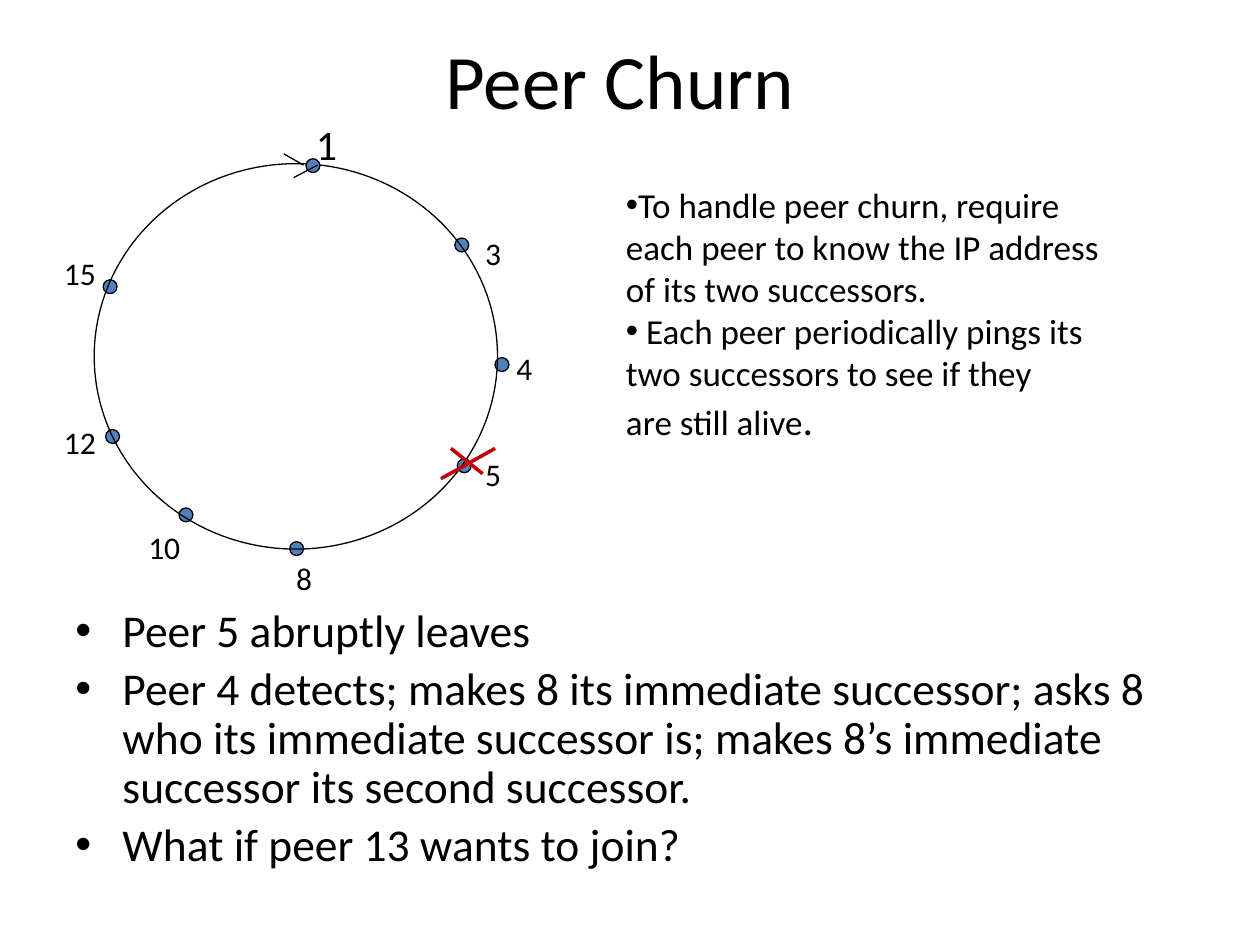
import pptx
import pptx.dml.color
import pptx.enum.shapes
import pptx.enum.text
import pptx.oxml
import pptx.oxml.ns
import pptx.util

Cm, Pt = pptx.util.Cm, pptx.util.Pt
ALIGN = pptx.enum.text.PP_ALIGN
ANCHOR = pptx.enum.text.MSO_ANCHOR
COLORS = {"text": "000000", "peer": "4F81BD", "cross": "C00000"}


def rgb(name):
    return pptx.dml.color.RGBColor.from_string(COLORS[name])


class SlideBuilder:
    font = "Calibri"
    dot_size = 0.28

    def __init__(self, slide):
        self.s = slide

    def format_run(self, r, size):
        r.font.name = self.font
        r.font.size = Pt(size)
        r.font.color.rgb = rgb("text")

    def text(self, x, y, w, h, lines, size, wrap=True, anchor=ANCHOR.TOP):
        sp = self.s.shapes.add_textbox(Cm(x), Cm(y), Cm(w), Cm(h))
        tf = sp.text_frame
        tf.word_wrap = wrap
        tf.vertical_anchor = anchor
        if not wrap:
            tf.auto_size = pptx.enum.text.MSO_AUTO_SIZE.SHAPE_TO_FIT_TEXT
        for i, line in enumerate(lines):
            p = tf.add_paragraph() if i else tf.paragraphs[0]
            p.text = line
            for r in p.runs:
                self.format_run(r, size)
        return tf

    def bullet(self, p, indent=0):
        pPr = p._p.get_or_add_pPr()
        pPr.set("marL", str(Cm(indent)))
        pPr.set("indent", str(-Cm(indent)))
        ns = pptx.oxml.ns.nsdecls("a")
        pPr.append(pptx.oxml.parse_xml(f'<a:buFont {ns} typeface="Arial"/>'))
        pPr.append(pptx.oxml.parse_xml(f'<a:buChar {ns} char="•"/>'))

    def ellipse(self, x, y, w, h, fill=None):
        sp = self.s.shapes.add_shape(pptx.enum.shapes.MSO_SHAPE.OVAL, Cm(x), Cm(y), Cm(w), Cm(h))
        sp.shadow.inherit = False
        if fill:
            sp.fill.solid()
            sp.fill.fore_color.rgb = rgb(fill)
        else:
            sp.fill.background()
        sp.line.color.rgb = rgb("text")
        sp.line.width = Pt(0.75)

    def peer_dot(self, cx, cy):
        d = self.dot_size
        self.ellipse(cx - d / 2, cy - d / 2, d, d, "peer")

    def line(self, x1, y1, x2, y2, color, width):
        c = self.s.shapes.add_connector(
            pptx.enum.shapes.MSO_CONNECTOR.STRAIGHT, Cm(x1), Cm(y1), Cm(x2), Cm(y2))
        c.line.color.rgb = rgb(color)
        c.line.width = Pt(width)
        c._element.spPr.append(pptx.oxml.parse_xml(
            f'<a:effectLst {pptx.oxml.ns.nsdecls("a")}/>'))


def main():
    prs = pptx.Presentation()
    prs.slide_width, prs.slide_height = Cm(25.4), Cm(19.05)
    b = SlideBuilder(prs.slides.add_slide(prs.slide_layouts[6]))

    # Title
    tf = b.text(1.07, 0, 22.86, 3.18, ["Peer Churn"], 44, anchor=ANCHOR.MIDDLE)
    tf.paragraphs[0].alignment = ALIGN.CENTER

    # What happens when a peer leaves
    tf = b.text(1.27, 12.14, 22.86, 5.92, [
        "Peer 5 abruptly leaves",
        "Peer 4 detects; makes 8 its immediate successor; asks 8 who its immediate "
        "successor is; makes 8’s immediate successor its second successor.",
        "What if peer 13 wants to join?",
    ], 26)
    for p in tf.paragraphs:
        p.line_spacing = 0.9
        p.space_before = Pt(5)
        b.bullet(p, 0.95)

    # Peers: number, dot centre, label corner
    peers = [
        (8, (5.98, 11.06), (5.72, 11.15)),
        (15, (2.22, 5.78), (1.04, 5.0)),
        (12, (2.27, 8.8), (1.04, 8.41)),
        (3, (9.31, 4.94), (9.53, 4.6)),
        (4, (10.12, 7.35), (10.16, 6.91)),
        (5, (9.36, 9.39), (9.53, 9.04)),
        (10, (3.75, 10.38), (2.74, 10.52)),
        (1, (6.31, 3.34), (6.12, 2.26)),
    ]
    first_peer = peers[-1]
    for _, center, _ in peers[:-1]:
        b.peer_dot(*center)

    # Ring and peer labels; the first peer sits on top of the ring
    b.ellipse(1.9, 3.3, 8.13, 7.77)
    for number, _, corner in peers:
        width = 0.94 if number < 10 else 1.37
        b.text(*corner, width, 1.27, [str(number)], 24 if number == 1 else 18, wrap=False)
    b.peer_dot(*first_peer[1])

    # Direction mark on the ring
    b.line(5.72, 3.1, 6.12, 3.33, "text", 0.75)
    b.line(6.4, 3.33, 5.92, 3.58, "text", 0.75)

    # Cross over the leaving peer
    b.line(9.09, 9.04, 9.73, 9.55, "cross", 2)
    b.line(9.98, 9.04, 8.89, 9.65, "cross", 2)

    # How churn is handled
    tf = b.text(12.37, 3.58, 10.13, 7.34, [
        "To handle peer churn, require",
        "each peer to know the IP address",
        "of its two successors.",
        " Each peer periodically pings its\ntwo successors to see if they\nare still alive",
    ], 20, wrap=False)
    b.bullet(tf.paragraphs[0])
    b.bullet(tf.paragraphs[3])
    r = tf.paragraphs[3].add_run()
    r.text = "."
    b.format_run(r, 24)

    prs.save("out.pptx")


if __name__ == "__main__":
    main()
